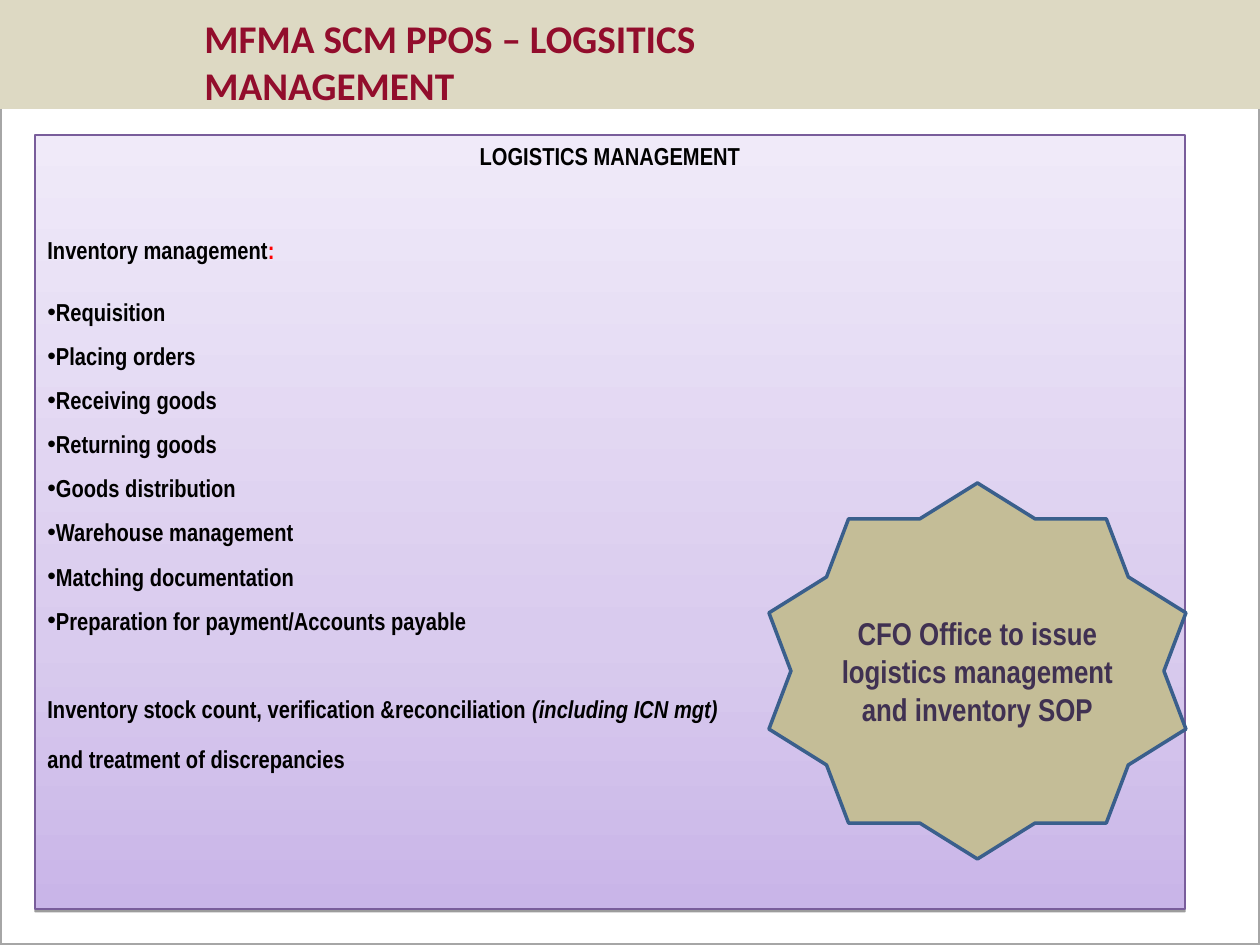
from copy import deepcopy
from dataclasses import dataclass

from lxml.etree import SubElement
from pptx import Presentation
from pptx.dml.color import RGBColor
from pptx.enum.shapes import MSO_SHAPE as Kind
from pptx.enum.text import MSO_ANCHOR as Anchor, PP_ALIGN as Align
from pptx.oxml.ns import qn
from pptx.shapes.autoshape import Shape
from pptx.util import Emu, Pt

SCALE = 914400 / 126
NARROW = "Arial Narrow"
BLACK = "000000"


@dataclass
class Span:
    text: str
    color: str = BLACK
    italic: bool = False


@dataclass
class Para:
    spans: list[Span]
    align: Align = Align.LEFT
    before: float = 0
    after: float = 0
    lead: float = 1.0
    bullet: bool = False


@dataclass
class Box:
    kind: Kind
    left: int
    top: int
    width: int
    height: int
    fill: str = ""
    line: str = ""
    weight: float = 0


def px(n: int) -> Emu:
    return Emu(round(n * SCALE))


def rgb(code: str) -> RGBColor:
    return RGBColor.from_string(code)


def draw(shapes, box: Box) -> Shape:
    shape = shapes.add_shape(
        box.kind, px(box.left), px(box.top), px(box.width), px(box.height))
    shape.shadow.inherit = False
    if box.fill:
        shape.fill.solid()
        shape.fill.fore_color.rgb = rgb(box.fill)
    else:
        shape.fill.background()
    if box.line:
        shape.line.color.rgb = rgb(box.line)
        shape.line.width = Pt(box.weight)
    else:
        shape.line.fill.background()
    return shape


def shade(shape: Shape, stops: list[tuple[float, str]], angle: int) -> None:
    fill = shape.fill
    fill.gradient()
    fill.gradient_angle = angle
    group = shape._element.spPr.find(qn("a:gradFill")).find(qn("a:gsLst"))
    while len(group) < len(stops):
        group.append(deepcopy(group[0]))
    for stop, (place, color) in zip(fill.gradient_stops, stops):
        stop.position = place
        stop.color.rgb = rgb(color)


def drop(shape: Shape, gap: float, alpha: int) -> None:
    effect = shape._element.spPr.find(qn("a:effectLst"))
    outer = SubElement(effect, qn("a:outerShdw"), blurRad="0",
                       dist=str(Pt(gap)), dir="5400000", rotWithShape="0")
    color = SubElement(outer, qn("a:srgbClr"), val=BLACK)
    SubElement(color, qn("a:alpha"), val=str(alpha * 1000))


def write(shape: Shape, paras: list[Para], size: float, font: str,
          anchor: Anchor) -> None:
    frame = shape.text_frame
    frame.word_wrap = True
    frame.vertical_anchor = anchor
    frame.text = "\n".join("" for _ in paras)
    for para, item in zip(frame.paragraphs, paras):
        para.alignment = item.align
        para.line_spacing = item.lead
        para.space_before = Pt(item.before)
        para.space_after = Pt(item.after)
        if item.bullet:
            props = para._p.get_or_add_pPr()
            props.set("marL", "0")
            props.set("indent", "0")
            SubElement(props, qn("a:buFont"), typeface="Arial")
            SubElement(props, qn("a:buChar"), char="•")
        for span in item.spans:
            run = para.add_run()
            run.text = span.text
            run.font.name = font
            run.font.size = Pt(size)
            run.font.bold = True
            run.font.italic = span.italic
            run.font.color.rgb = rgb(span.color)


STEPS = [
    "Requisition", "Placing orders", "Receiving goods", "Returning goods",
    "Goods distribution", "Warehouse management", "Matching documentation",
    "Preparation for payment/Accounts payable",
]

BODY = [
    Para([Span("LOGISTICS MANAGEMENT")], Align.CENTER, after=37),
    Para([Span("Inventory management"), Span(":", "FF0000")], after=10),
    *[Para([Span(step)], lead=1.5, bullet=True) for step in STEPS],
    Para([Span("Inventory stock count, verification &reconciliation "),
          Span("(including ICN mgt)", italic=True)], before=25, lead=1.5),
    Para([Span("and treatment of discrepancies")], before=12, after=10),
]


def main() -> None:
    deck = Presentation()
    deck.slide_width, deck.slide_height = px(1260), px(945)
    shapes = deck.slides.add_slide(deck.slide_layouts[6]).shapes

    draw(shapes, Box(Kind.RECTANGLE, 0, 106, 1260, 839, line="A6A6A6", weight=2))

    panel = draw(shapes, Box(Kind.RECTANGLE, 35, 135, 1150, 774,
                             line="795D9B", weight=0.75))
    shade(panel, [(0, "C9B5E8"), (0.35, "D9CBEE"), (1, "F0EAF9")], 90)
    drop(panel, 1.6, 38)
    write(panel, BODY, 14, NARROW, Anchor.TOP)

    draw(shapes, Box(Kind.RECTANGLE, 0, 0, 1260, 109, "DDD9C3"))
    title = shapes.add_textbox(px(192), px(26), px(765), px(70))
    write(title, [Para([Span("MFMA SCM PPOS – LOGSITICS MANAGEMENT", "920D2C")])],
          22.4, "Calibri", Anchor.MIDDLE)

    star = draw(shapes, Box(Kind.STAR_10_POINT, 769, 483, 417, 376,
                            "C4BD97", "3A5F8C", 2))
    note = "CFO Office to issue logistics management and inventory SOP"
    write(star, [Para([Span(note, "403152")], Align.CENTER)],
          18, NARROW, Anchor.MIDDLE)

    deck.save("out.pptx")


if __name__ == "__main__":
    main()
